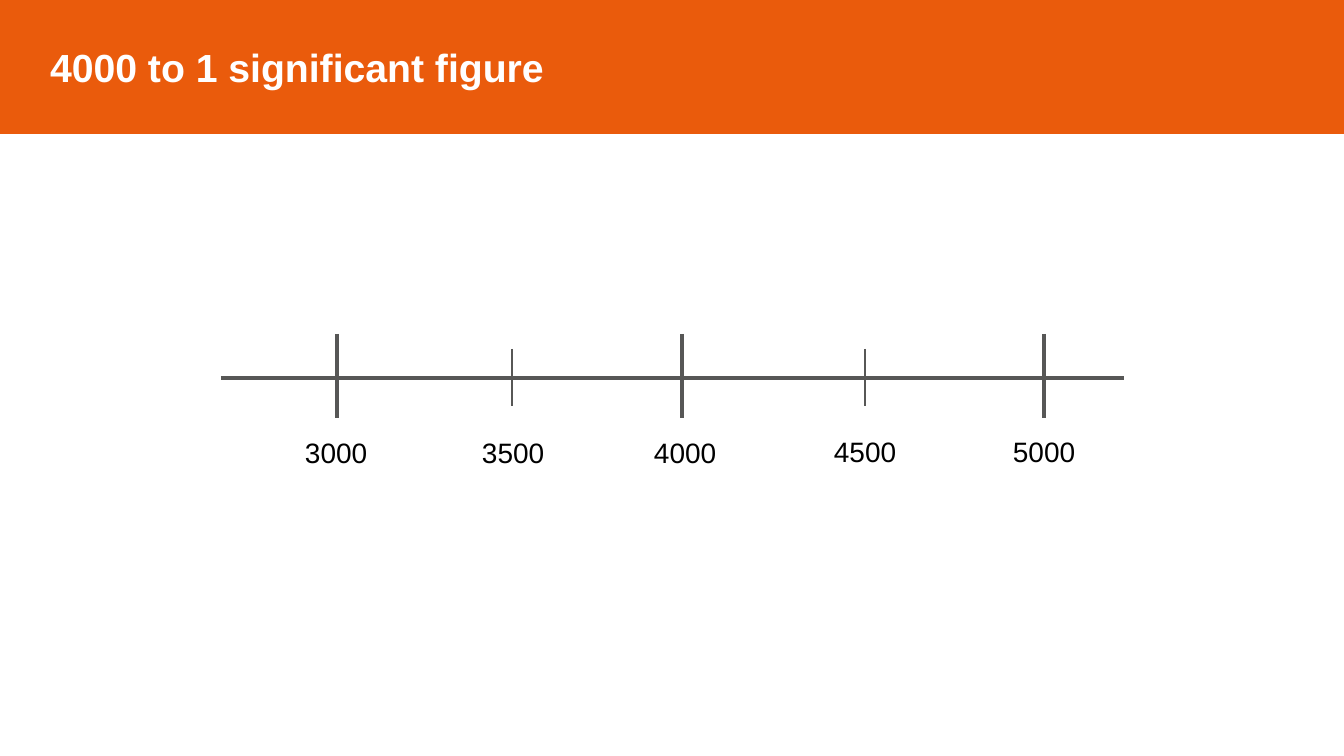
from pptx import Presentation
from pptx.dml.color import RGBColor
from pptx.enum.shapes import MSO_CONNECTOR, MSO_SHAPE
from pptx.enum.text import MSO_ANCHOR, MSO_AUTO_SIZE, PP_ALIGN
from pptx.oxml.ns import qn
from pptx.util import Pt
from lxml import etree

STRAIGHT = MSO_CONNECTOR.STRAIGHT
RECT = MSO_SHAPE.RECTANGLE
MIDDLE = MSO_ANCHOR.MIDDLE
LEFT = PP_ALIGN.LEFT
GROW = MSO_AUTO_SIZE.SHAPE_TO_FIT_TEXT
PX = 914400 / 100.8
ORANGE, GREY, WHITE, BLACK = "EA5B0C", "575756", "FFFFFF", "000000"


def color(fmt, value):
    fmt.rgb = RGBColor.from_string(value)


def add_line(x1, y1, x2, y2, weight):
    ends = [round(v * PX) for v in (x1, y1, x2, y2)]
    c = s.shapes.add_connector(STRAIGHT, *ends)
    color(c.line.color, GREY)
    c.line.width = Pt(weight)
    etree.SubElement(c._element.spPr, qn("a:effectLst"))


prs = Presentation()
prs.slide_width, prs.slide_height = round(1344 * PX), round(756 * PX)
s = prs.slides.add_slide(prs.slide_layouts[6])

axis_y = 378
add_line(221, axis_y, 1124, axis_y, 3)

ticks = [
    ("3000", 337, 295, 431),
    ("3500", 512, 472, 431),
    ("4000", 682, 644, 431),
    ("4500", 865, 824, 430),
    ("5000", 1044, 1003, 430),
]
for i, (label, x, left, top) in enumerate(ticks):
    if i % 2:
        add_line(x, 349, x, 406, 2)
    else:
        add_line(x, 334, x, 418, 3)
    sp = s.shapes.add_textbox(*[round(v * PX) for v in (left, top, 84, 44)])
    tf = sp.text_frame
    tf.word_wrap = False
    tf.auto_size = GROW
    p = tf.paragraphs[0]
    p.text = label
    p.font.name, p.font.size = "Arial", Pt(20)
    color(p.font.color, BLACK)

sp = s.shapes.add_shape(RECT, 0, 0, prs.slide_width, round(133 * PX))
sp.shadow.inherit = False
sp.fill.solid()
color(sp.fill.fore_color, ORANGE)
color(sp.line.color, ORANGE)
sp.line.width = Pt(1)
tf = sp.text_frame
tf.word_wrap = True
tf.vertical_anchor = MIDDLE
tf.margin_left = round(50 * PX)
p = tf.paragraphs[0]
p.text = "4000 to 1 significant figure"
p.alignment = LEFT
p.font.name, p.font.size, p.font.bold = "Arial", Pt(28), True
color(p.font.color, WHITE)

prs.save("out.pptx")
